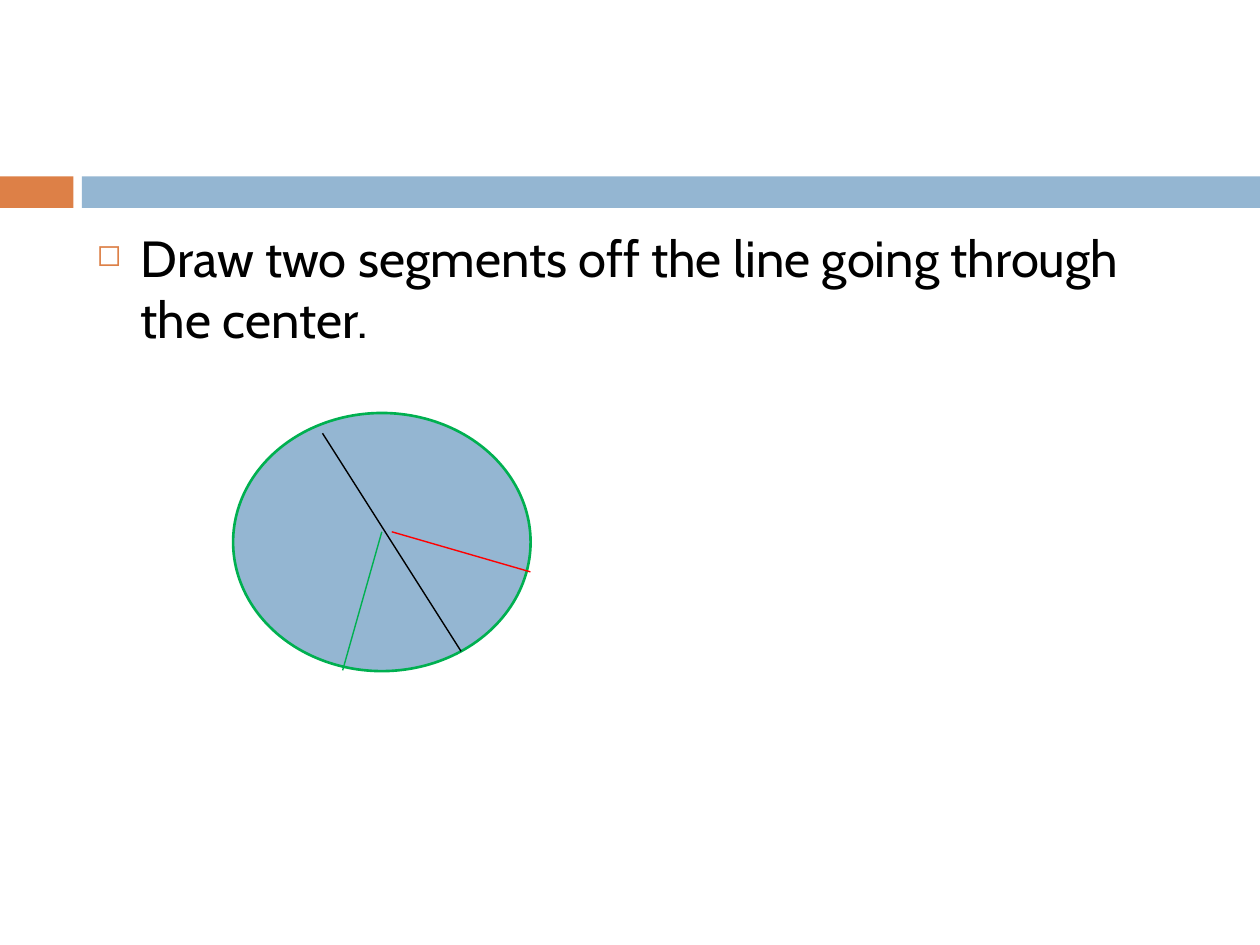
from dataclasses import dataclass

from lxml import etree
from pptx import Presentation
from pptx import util as u
from pptx.dml.color import RGBColor
from pptx.enum import shapes, text
from pptx.oxml import ns
from pptx.slide import Slide

COLORS = {
    "orange": "DD8047",
    "blue": "94B6D2",
    "green": "00B050",
    "red": "FF0000",
    "black": "000000",
}


@dataclass
class Area:
    kind: shapes.MSO_SHAPE
    left: float
    top: float
    width: float
    height: float
    fill: str
    outline: str = ""


@dataclass
class Segment:
    start: tuple[float, float]
    end: tuple[float, float]
    color: str


AREAS = [
    Area(shapes.MSO_SHAPE.RECTANGLE, 0, 100.8, 42, 18, "orange"),
    Area(shapes.MSO_SHAPE.RECTANGLE, 46.8, 100.8, 673.2, 18, "blue"),
    Area(shapes.MSO_SHAPE.OVAL, 133.2, 236, 170, 147.5, "blue", "green"),
]
SEGMENTS = [
    Segment((184.3, 247.6), (263.5, 372.2), "black"),
    Segment((218.2, 303.9), (195.8, 383.1), "green"),
    Segment((223.9, 303.9), (303.1, 326.8), "red"),
]


def rgb(name: str) -> RGBColor:
    return RGBColor.from_string(COLORS[name])


def draw_area(slide: Slide, area: Area) -> None:
    shape = slide.shapes.add_shape(
        area.kind, u.Pt(area.left), u.Pt(area.top), u.Pt(area.width), u.Pt(area.height)
    )
    shape.shadow.inherit = False
    shape.fill.solid()
    shape.fill.fore_color.rgb = rgb(area.fill)
    if area.outline:
        shape.line.color.rgb = rgb(area.outline)
        shape.line.width = u.Pt(1.5)
    else:
        shape.line.fill.background()


def draw_segment(slide: Slide, segment: Segment) -> None:
    connector = slide.shapes.add_connector(
        shapes.MSO_CONNECTOR.STRAIGHT,
        *(u.Pt(value) for value in segment.start + segment.end),
    )
    connector.line.color.rgb = rgb(segment.color)
    connector.line.width = u.Pt(0.79)
    etree.SubElement(connector._element.spPr, ns.qn("a:effectLst"))


def draw_instruction(slide: Slide, wording: str) -> None:
    box = slide.shapes.add_textbox(u.Pt(48.2), u.Pt(126), u.Pt(642.2), u.Pt(354.2))
    frame = box.text_frame
    frame.word_wrap = True
    frame.vertical_anchor = text.MSO_ANCHOR.TOP
    frame.text = wording
    paragraph = frame.paragraphs[0]
    paragraph.space_before = u.Pt(7)
    font = paragraph.runs[0].font
    font.name = "Cabin"
    font.size = u.Pt(29)
    font.color.rgb = rgb("black")

    properties = paragraph._p.get_or_add_pPr()
    properties.set("marL", str(u.Pt(25.2)))
    properties.set("indent", str(-u.Pt(25.2)))
    bullet_color = etree.SubElement(properties, ns.qn("a:buClr"))
    etree.SubElement(bullet_color, ns.qn("a:srgbClr"), val=COLORS["orange"])
    etree.SubElement(properties, ns.qn("a:buSzPct"), val="60000")
    etree.SubElement(properties, ns.qn("a:buChar"), char="◻")


def main() -> None:
    presentation = Presentation()
    presentation.slide_width = u.Pt(720)
    presentation.slide_height = u.Pt(540)
    slide = presentation.slides.add_slide(presentation.slide_layouts[6])
    for area in AREAS:
        draw_area(slide, area)
    draw_instruction(slide, "Draw two segments off the line going through the center.")
    for segment in SEGMENTS:
        draw_segment(slide, segment)
    presentation.save("out.pptx")


if __name__ == "__main__":
    main()
